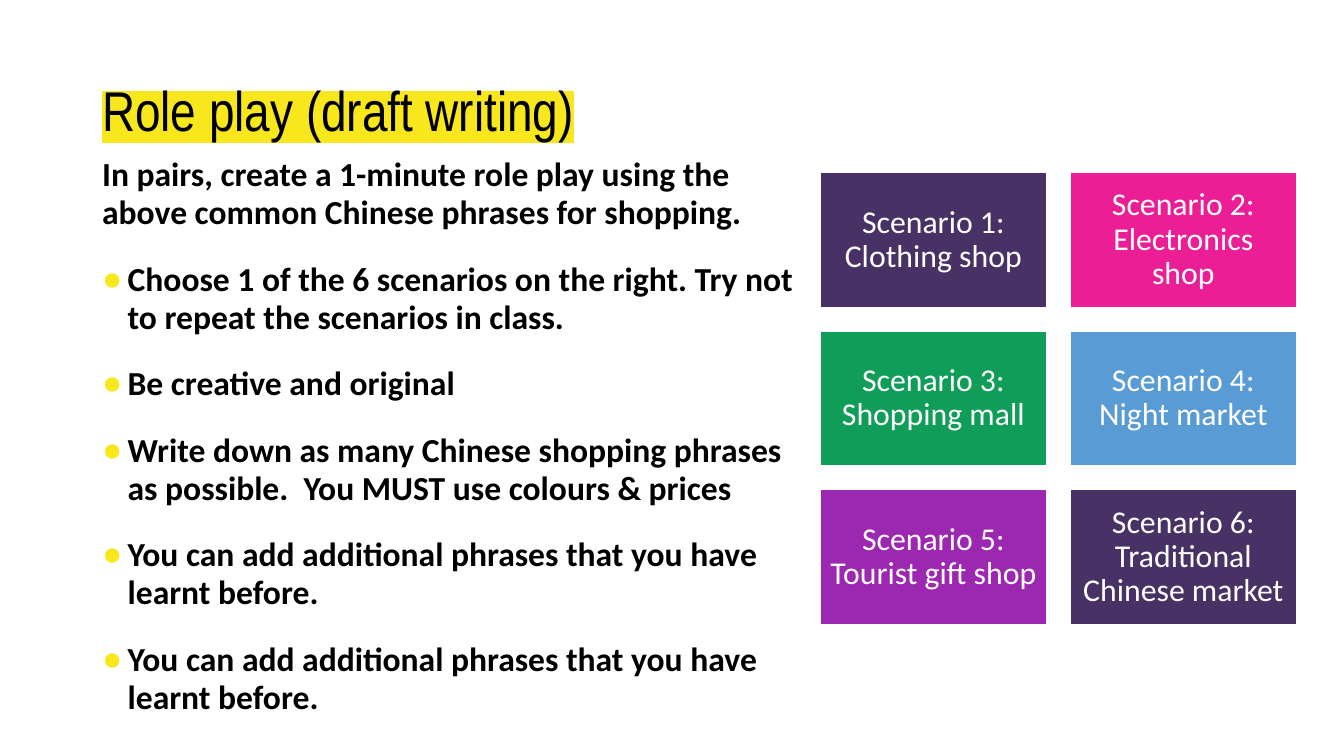
"""Build the role play slide: task instructions beside a grid of six scenarios."""
from lxml import etree
from pptx import Presentation
from pptx.dml.color import RGBColor
from pptx.enum.shapes import MSO_SHAPE
from pptx.enum.text import MSO_ANCHOR, PP_ALIGN
from pptx.oxml.ns import qn
from pptx.util import Inches, Pt

RECTANGLE = MSO_SHAPE.RECTANGLE
TOP, MIDDLE = MSO_ANCHOR.TOP, MSO_ANCHOR.MIDDLE
LEFT, CENTER = PP_ALIGN.LEFT, PP_ALIGN.CENTER

WIDTH = 10
HEIGHT = WIDTH * 9 / 16
BLACK, WHITE, YELLOW = "000000", "FFFFFF", "F8E71C"

TITLE = "Role play (draft writing)"
INTRO = "In pairs, create a 1-minute role play using the above common Chinese phrases for shopping."
STEPS = [
    "Choose 1 of the 6 scenarios on the right. Try not to repeat the scenarios in class.",
    "Be creative and original",
    "Write down as many Chinese shopping phrases as possible.  You MUST use colours & prices",
    "You can add additional phrases that you have learnt before.",
    "You can add additional phrases that you have learnt before.",
]
SCENARIOS = [
    ("Clothing shop", "483165"),
    ("Electronics shop", "EB1E95"),
    ("Shopping mall", "0F9D58"),
    ("Night market", "599BD5"),
    ("Tourist gift shop", "9C27B0"),
    ("Traditional Chinese market", "483165"),
]

TITLE_BOX = (0.69, 0.3, 8.62, 1.09)
BODY_BOX = (0.69, 1.12, 5.34, 4.35)
COLUMNS = 2
GRID_LEFT, GRID_TOP = 6.1, 1.28
CARD_WIDTH, CARD_HEIGHT = 1.69, 1.01
COLUMN_STEP, ROW_STEP = 1.86, 1.18

TITLE_FONT = {"name": "Arial Narrow", "size": Pt(30), "bold": False}
BODY_FONT = {"name": "Calibri", "size": Pt(18), "bold": True}
CARD_FONT = {"name": "Calibri", "size": Pt(17), "bold": False}


def rgb(value):
    return RGBColor.from_string(value)


def set_attributes(target, values):
    for name, value in values.items():
        setattr(target, name, value)


def set_frame(frame, anchor, side, edge):
    set_attributes(frame, {
        "word_wrap": True, "vertical_anchor": anchor,
        "margin_left": Inches(side), "margin_right": Inches(side),
        "margin_top": Inches(edge), "margin_bottom": Inches(edge),
    })


def write(paragraph, text, font, color, spacing, before=0, align=LEFT):
    set_attributes(paragraph, {
        "alignment": align, "line_spacing": spacing, "space_before": Pt(before),
    })
    run = paragraph.add_run()
    run.text = text
    set_attributes(run.font, font)
    run.font.color.rgb = rgb(color)
    return run


def add_color(parent, tag, color):
    holder = etree.SubElement(parent, qn(tag))
    etree.SubElement(holder, qn("a:srgbClr"), val=color)
    return holder


def add_bullet(paragraph, color):
    properties = paragraph._p.get_or_add_pPr()
    properties.set("marL", str(Inches(0.19)))
    properties.set("indent", str(Inches(-0.21)))
    add_color(properties, "a:buClr", color)
    etree.SubElement(properties, qn("a:buFont"), typeface="Arial")
    etree.SubElement(properties, qn("a:buChar"), char="●")


def highlight(run, color):
    properties = run._r.get_or_add_rPr()
    marker = add_color(properties, "a:highlight", color)
    properties.find(qn("a:solidFill")).addnext(marker)


def add_title(slide):
    frame = slide.shapes.add_textbox(*map(Inches, TITLE_BOX)).text_frame
    set_frame(frame, MIDDLE, 0.07, 0.04)
    highlight(write(frame.paragraphs[0], TITLE, TITLE_FONT, BLACK, 0.9), YELLOW)


def add_instructions(slide):
    frame = slide.shapes.add_textbox(*map(Inches, BODY_BOX)).text_frame
    set_frame(frame, TOP, 0.07, 0.04)
    write(frame.paragraphs[0], INTRO, BODY_FONT, BLACK, 0.95)
    for step in STEPS:
        paragraph = frame.add_paragraph()
        write(paragraph, step, BODY_FONT, BLACK, 0.95, before=15)
        add_bullet(paragraph, YELLOW)


def add_scenarios(slide):
    for index, (place, color) in enumerate(SCENARIOS):
        row, column = divmod(index, COLUMNS)
        box = (GRID_LEFT + column * COLUMN_STEP, GRID_TOP + row * ROW_STEP,
               CARD_WIDTH, CARD_HEIGHT)
        card = slide.shapes.add_shape(RECTANGLE, *map(Inches, box))
        card.shadow.inherit = False
        card.fill.solid()
        card.fill.fore_color.rgb = rgb(color)
        card.line.color.rgb = rgb(WHITE)
        card.line.width = Pt(1)
        set_frame(card.text_frame, MIDDLE, 0.07, 0.07)
        write(card.text_frame.paragraphs[0], f"Scenario {index + 1}: {place}",
              CARD_FONT, WHITE, 0.9, align=CENTER)


def main():
    deck = Presentation()
    deck.slide_width, deck.slide_height = Inches(WIDTH), Inches(HEIGHT)
    slide = deck.slides.add_slide(deck.slide_layouts[6])
    add_title(slide)
    add_instructions(slide)
    add_scenarios(slide)
    deck.save("out.pptx")


if __name__ == "__main__":
    main()
